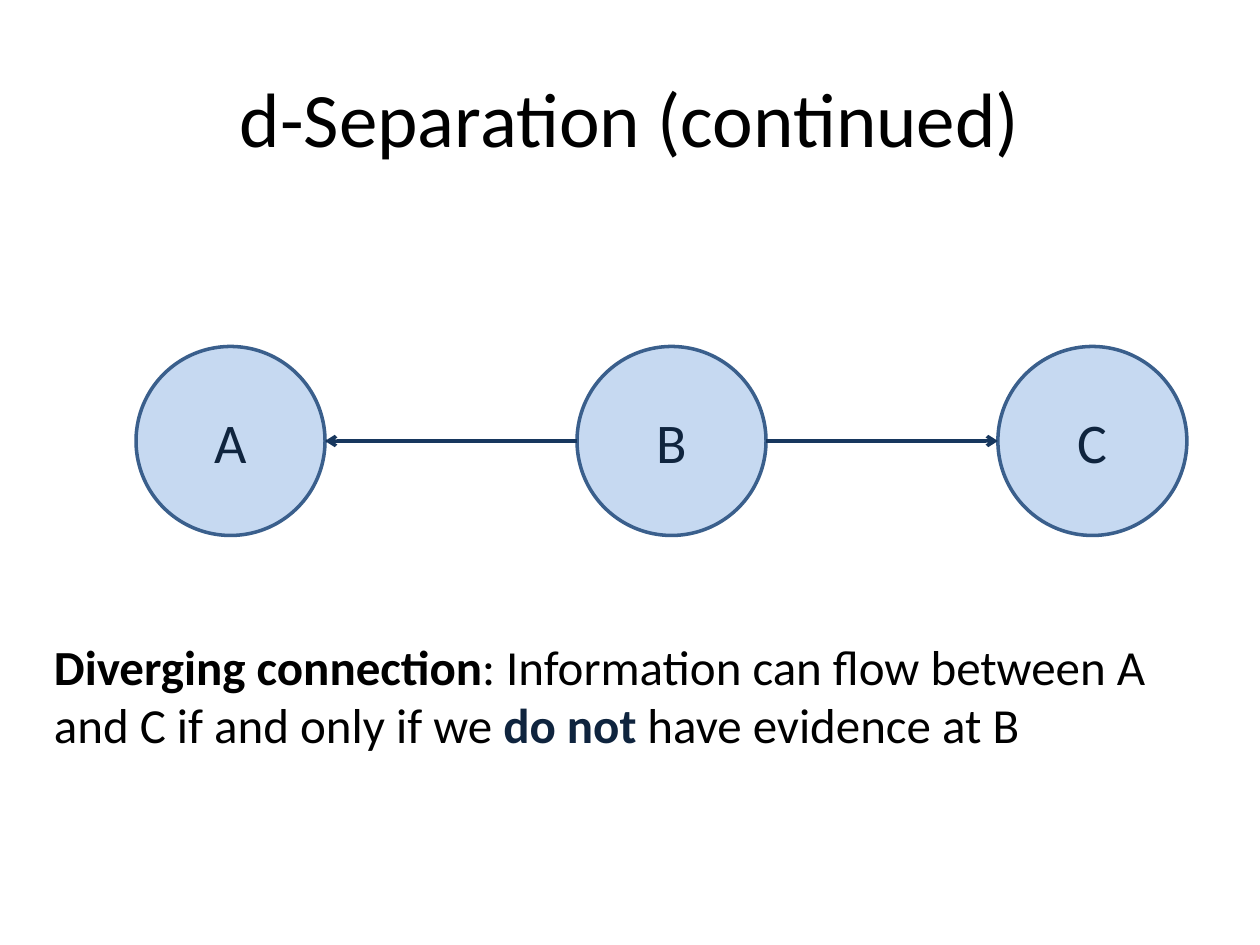
from pptx import Presentation
from pptx.dml.color import RGBColor
from pptx.enum.shapes import MSO_CONNECTOR, MSO_SHAPE
from pptx.enum.text import MSO_ANCHOR, MSO_AUTO_SIZE, PP_ALIGN
from pptx.oxml.ns import qn
from pptx.util import Inches, Pt
from lxml.etree import SubElement

BLACK = RGBColor(0x00, 0x00, 0x00)
NAVY = RGBColor(0x0F, 0x24, 0x3E)
ARROW_BLUE = RGBColor(0x17, 0x37, 0x5E)
OUTLINE_BLUE = RGBColor(0x3A, 0x5F, 0x8C)
PALE_BLUE = RGBColor(0xC6, 0xD9, 0xF1)

LEFT_SIDE, RIGHT_SIDE = 1, 3  # connection sites in the middle of a placeable ellipse's sides
NODE_SIZE = 1.5
NODE_TOP = 2.75
NODE_LEFTS = {"A": 1.08, "B": 4.58, "C": 7.92}


def add_span(para, text, size, color=BLACK, bold=False, font="Calibri"):
    span = para.add_run()
    span.text = text
    span.font.name = font
    span.font.size = Pt(size)
    span.font.bold = bold
    span.font.color.rgb = color


class SlideBuilder:
    line_width = Pt(2)

    def __init__(self, page):
        self.page = page

    def title(self, text, left, top, width, height):
        box = self.page.shapes.title
        box.left, box.top = Inches(left), Inches(top)
        box.width, box.height = Inches(width), Inches(height)
        box.text_frame.vertical_anchor = MSO_ANCHOR.MIDDLE
        para = box.text_frame.paragraphs[0]
        para.alignment = PP_ALIGN.CENTER
        add_span(para, text, size=44)

    def node(self, label, left, top, size):
        circle = self.page.shapes.add_shape(
            MSO_SHAPE.OVAL, Inches(left), Inches(top), Inches(size), Inches(size))
        circle.shadow.inherit = False
        circle.fill.solid()
        circle.fill.fore_color.rgb = PALE_BLUE
        circle.line.color.rgb = OUTLINE_BLUE
        circle.line.width = self.line_width
        circle.text_frame.vertical_anchor = MSO_ANCHOR.MIDDLE
        para = circle.text_frame.paragraphs[0]
        para.alignment = PP_ALIGN.CENTER
        add_span(para, label, size=32, color=NAVY)

    def arrow(self, start, end, level):
        """Draw a horizontal arrow pointing at end."""
        arrow = self.page.shapes.add_connector(
            MSO_CONNECTOR.STRAIGHT, Inches(start), Inches(level), Inches(end), Inches(level))
        arrow.line.color.rgb = ARROW_BLUE
        arrow.line.width = self.line_width
        SubElement(arrow.line._get_or_add_ln(), qn("a:tailEnd"), type="arrow")
        SubElement(arrow._element.spPr, qn("a:effectLst"))

    def text(self, lines, left, top, width, height):
        """Add a text box; each line is a list of (text, format) pairs."""
        box = self.page.shapes.add_textbox(
            Inches(left), Inches(top), Inches(width), Inches(height))
        frame = box.text_frame
        frame.word_wrap = False
        frame.auto_size = MSO_AUTO_SIZE.SHAPE_TO_FIT_TEXT
        for index, spans in enumerate(lines):
            para = frame.add_paragraph() if index else frame.paragraphs[0]
            for text, style in spans:
                add_span(para, text, size=28, **style)


def main():
    deck = Presentation()
    deck.slide_width, deck.slide_height = Inches(10), Inches(7.5)
    title_only = deck.slide_layouts[5]
    builder = SlideBuilder(deck.slides.add_slide(title_only))

    builder.title("d-Separation (continued)", 0.5, 0.3, 9, 1.25)
    for label, left in NODE_LEFTS.items():
        builder.node(label, left, NODE_TOP, NODE_SIZE)

    middle = NODE_TOP + NODE_SIZE / 2
    builder.arrow(NODE_LEFTS["B"] + NODE_SIZE, NODE_LEFTS["C"], middle)
    builder.arrow(NODE_LEFTS["B"], NODE_LEFTS["A"] + NODE_SIZE, middle)

    builder.text([
        [("Diverging connection", {"bold": True}),
         (": Information can flow between A", {})],
        [("and C if and only if we ", {}),
         ("do not ", {"bold": True, "color": NAVY}),
         ("have evidence at B", {})],
    ], 0.33, 5, 9.06, 1.04)

    deck.save("out.pptx")


if __name__ == "__main__":
    main()
